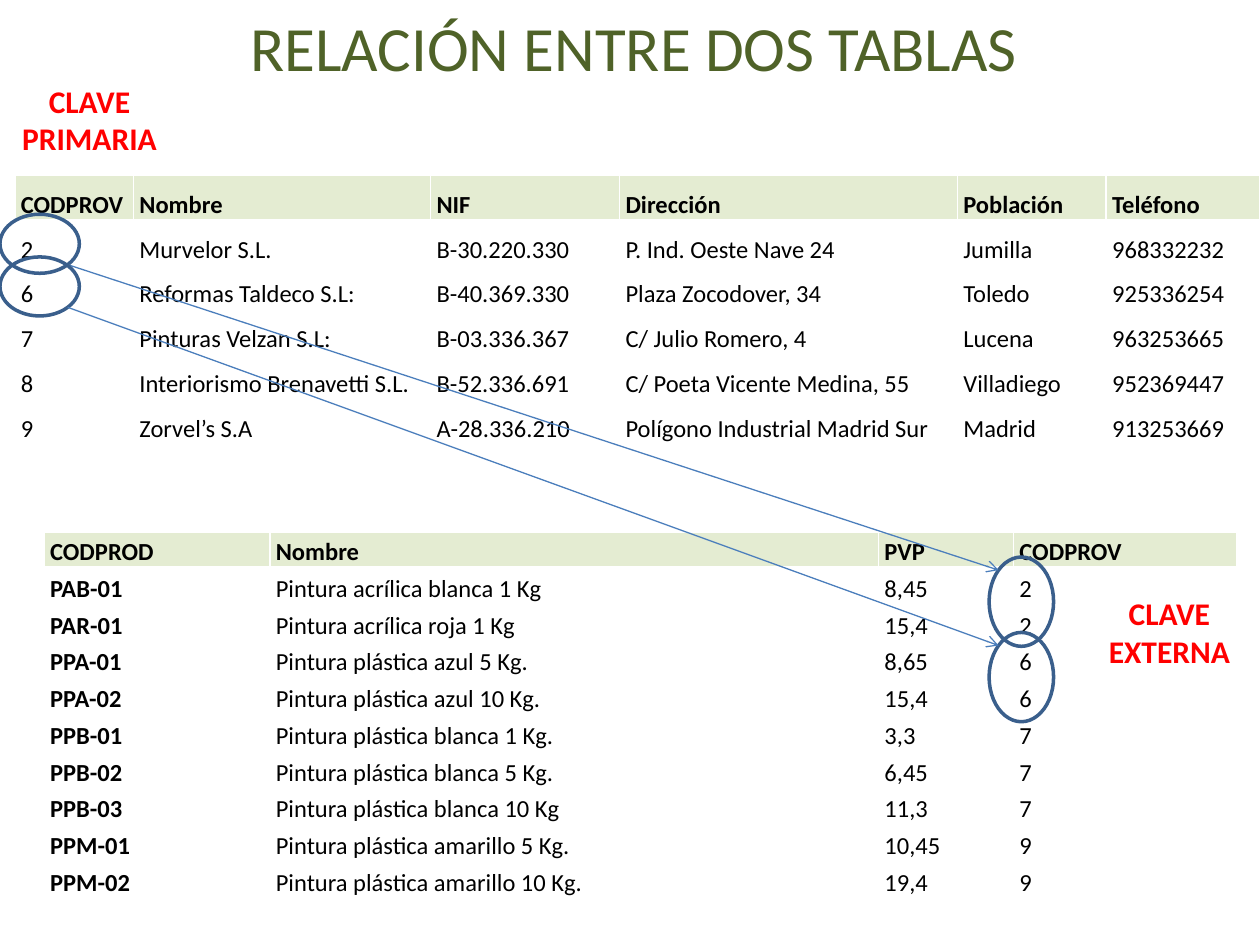
from lxml import etree
from pptx import Presentation
from pptx.dml.color import RGBColor
from pptx.enum.shapes import MSO_CONNECTOR, MSO_SHAPE
from pptx.enum.text import MSO_ANCHOR, PP_ALIGN
from pptx.oxml import parse_xml
from pptx.oxml.ns import nsdecls, qn
from pptx.util import Cm, Pt

OVAL = MSO_SHAPE.OVAL
LINE = MSO_CONNECTOR.STRAIGHT
TOP, MIDDLE = MSO_ANCHOR.TOP, MSO_ANCHOR.MIDDLE
LEFT, CENTER = PP_ALIGN.LEFT, PP_ALIGN.CENTER
HEX = {"title": "4F6228", "key": "FF0000", "text": "000000", "head": "D7E4BD",
       "edge": "FFFFFF", "ring": "3A5F8C", "arrow": "4B7EBC"}
RGB = {name: RGBColor.from_string(code) for name, code in HEX.items()}


def write(frame, text, size=14, color="text", bold=False, align=LEFT, space=1.0):
    frame.word_wrap = True
    para = frame.paragraphs[0]
    para.alignment = align
    para.line_spacing = space
    run = para.add_run()
    run.text = text
    font = run.font
    font.name, font.size, font.bold = "Calibri", Pt(size), bold
    font.color.rgb = RGB[color]


def style_cell(cell, anchor, head, base):
    cell.vertical_anchor = anchor
    cell.margin_left = cell.margin_right = Cm(0.12)
    cell.margin_top = cell.margin_bottom = 0
    props = cell._tc.get_or_add_tcPr()
    for side in "LRTB":
        width = Pt(base if head and side == "B" else 1)
        props.append(parse_xml(
            f'<a:ln{side} {nsdecls("a")} w="{width}"><a:solidFill>'
            f'<a:srgbClr val="{HEX["edge"]}"/></a:solidFill></a:ln{side}>'))
    if head:
        cell.fill.solid()
        cell.fill.fore_color.rgb = RGB["head"]
        tint = props.find(qn("a:solidFill")).find(qn("a:srgbClr"))
        etree.SubElement(tint, qn("a:alpha"), val="67000")
    else:
        cell.fill.background()


prs = Presentation()
prs.slide_width, prs.slide_height = Cm(25.4), Cm(19.05)
slide = prs.slides.add_slide(prs.slide_layouts[5])
shapes = slide.shapes

# Title
title = shapes.title
title.left, title.top, title.width, title.height = Cm(1.35), Cm(0.33), Cm(22.86), Cm(1.19)
title.text_frame.vertical_anchor = MIDDLE
write(title.text_frame, "RELACIÓN ENTRE DOS TABLAS", size=36, color="title", align=CENTER)

# Tables: suppliers, then products
firms = [
    ("CODPROV", "Nombre", "NIF", "Dirección", "Población", "Teléfono"),
    ("2", "Murvelor S.L.", "B-30.220.330", "P. Ind. Oeste Nave 24", "Jumilla", "968332232"),
    ("6", "Reformas Taldeco S.L:", "B-40.369.330", "Plaza Zocodover, 34", "Toledo", "925336254"),
    ("7", "Pinturas Velzan S.L:", "B-03.336.367", "C/ Julio Romero, 4", "Lucena", "963253665"),
    ("8", "Interiorismo Brenavetti S.L.", "B-52.336.691", "C/ Poeta Vicente Medina, 55",
     "Villadiego", "952369447"),
    ("9", "Zorvel’s S.A", "A-28.336.210", "Polígono Industrial Madrid Sur", "Madrid", "913253669"),
]
goods = [
    ("CODPROD", "Nombre", "PVP", "CODPROV"),
    ("PAB-01", "Pintura acrílica blanca 1 Kg", "8,45", "2"),
    ("PAR-01", "Pintura acrílica roja 1 Kg", "15,4", "2"),
    ("PPA-01", "Pintura plástica azul 5 Kg.", "8,65", "6"),
    ("PPA-02", "Pintura plástica azul 10 Kg.", "15,4", "6"),
    ("PPB-01", "Pintura plástica blanca 1 Kg.", "3,3", "7"),
    ("PPB-02", "Pintura plástica blanca 5 Kg.", "6,45", "7"),
    ("PPB-03", "Pintura plástica blanca 10 Kg", "11,3", "7"),
    ("PPM-01", "Pintura plástica amarillo 5 Kg.", "10,45", "9"),
    ("PPM-02", "Pintura plástica amarillo 10 Kg.", "19,4", "9"),
]
# data, left, top, column widths, row heights, anchor, line spacing, bold codes, header base
tables = [
    (firms, 0.3, 3.53, [2.39, 5.99, 3.81, 6.81, 3, 3.1], [0.84] * 4 + [0.91, 1.09],
     TOP, 1.5, False, 1),
    (goods, 0.89, 10.72, [4.55, 12.27, 2.72, 4.5], [0.74] * 10, MIDDLE, 1.15, True, 3),
]
for data, left, top, cols, rows, anchor, space, codes, base in tables:
    grid = shapes.add_table(len(rows), len(cols), Cm(left), Cm(top),
                            Cm(sum(cols)), Cm(sum(rows))).table
    grid.horz_banding = False
    for col, width in zip(grid.columns, cols):
        col.width = Cm(width)
    for r, (row, height) in enumerate(zip(grid.rows, rows)):
        row.height = Cm(height)
        for c, cell in enumerate(row.cells):
            style_cell(cell, anchor, r == 0, base)
            write(cell.text_frame, data[r][c], space=space,
                  bold=r == 0 or (codes and c == 0))

# Rings around matching keys, joined by arrows from lower right to upper left
near, far = 0.5 + 0.125 ** 0.5, 0.5 - 0.125 ** 0.5
for start, end in [(4.32, 11.23), (5.18, 12.75)]:
    boxes = [(0, start, 1.6, 1.19), (19.94, end, 1.3, 1.8)]
    for box in boxes:
        ring = shapes.add_shape(OVAL, *map(Cm, box))
        ring.shadow.inherit = False
        ring.fill.background()
        ring.line.color.rgb = RGB["ring"]
        ring.line.width = Pt(2)
    ends = [Cm(spot) for (x, y, w, h), part in zip(boxes, (near, far))
            for spot in (x + w * part, y + h * part)]
    arrow = shapes.add_connector(LINE, *ends)
    arrow.line.color.rgb = RGB["arrow"]
    arrow.line.width = Pt(0.75)
    etree.SubElement(arrow.line._get_or_add_ln(), qn("a:tailEnd"), type="arrow")
    etree.SubElement(arrow._element.spPr, qn("a:effectLst"))

# Key labels
for text, left, top in [("CLAVE PRIMARIA", 0, 1.52), ("CLAVE EXTERNA", 21.77, 11.86)]:
    label = shapes.add_textbox(Cm(left), Cm(top), Cm(3.61), Cm(1.8))
    write(label.text_frame, text, size=18, color="key", bold=True, align=CENTER)

prs.save("out.pptx")
